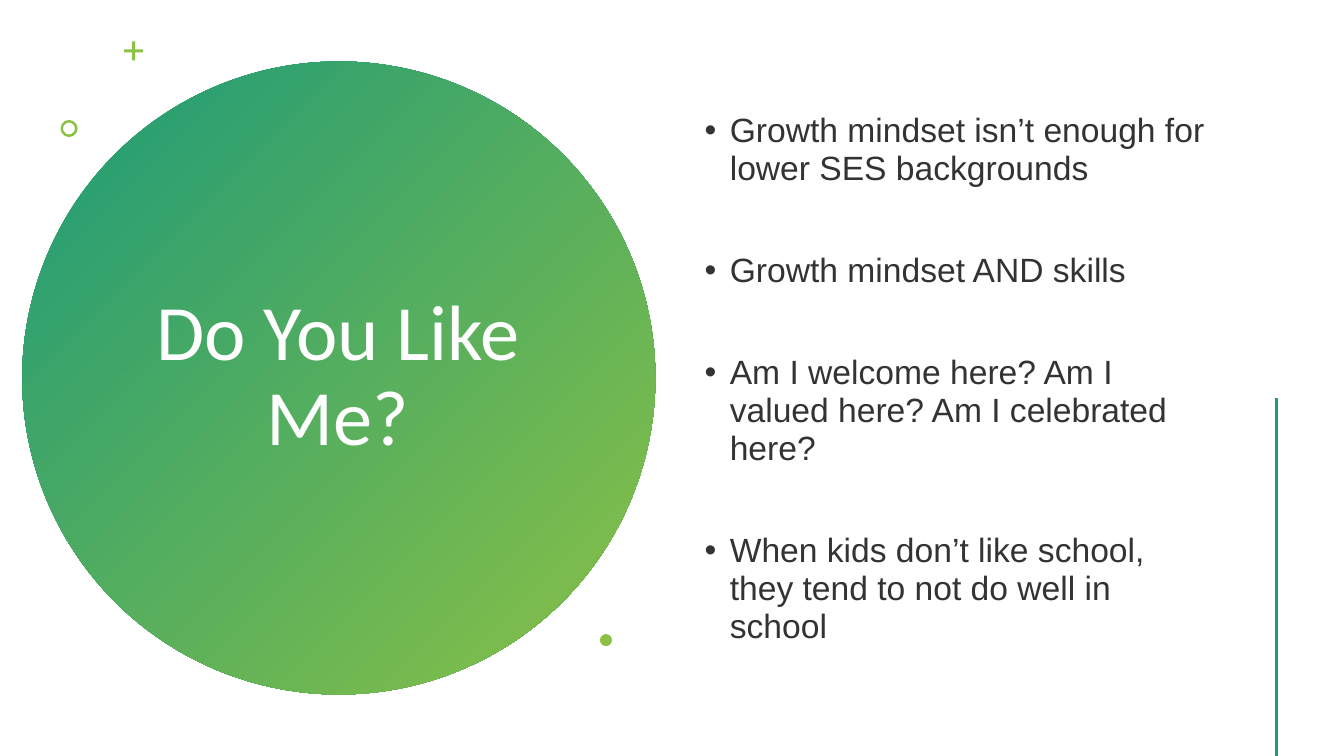
import pptx
import pptx.util
import pptx.dml.color
import pptx.enum.shapes
import pptx.enum.text
import pptx.oxml
import pptx.oxml.ns

SHAPE = pptx.enum.shapes.MSO_SHAPE
ALIGN = pptx.enum.text.PP_ALIGN
Inches, Pt = pptx.util.Inches, pptx.util.Pt

WIDTH, HEIGHT = 13.33, 7.5
COLORS = {"teal": "1D9A78", "green": "8BC145", "white": "FFFFFF", "text": "333333"}
TITLE = "Do You Like Me?"
POINTS = [
    "Growth mindset isn’t enough for lower SES backgrounds",
    "Growth mindset AND skills",
    "Am I welcome here? Am I valued here? Am I celebrated here?",
    "When kids don’t like school, they tend to not do well in school",
]
CIRCLE = (0.22, 0.61, 6.28, 6.28)
TITLE_BOX = (1.36, 1.41, 3.99, 4.67)
BODY_BOX = (6.89, 0.57, 5.22, 6.38)
ACCENTS = [
    (SHAPE.CROSS, (1.23, 0.41, 0.19, 0.19), 0.42),
    (SHAPE.DONUT, (0.6, 1.19, 0.17, 0.17), 0.15),
    (SHAPE.OVAL, (5.95, 6.29, 0.12, 0.12), None),
]
RULE_X, RULE_TOP = 0.95 * WIDTH, 3.95
INDENT = 0.25
TITLE_FORMAT = {"size": Pt(56), "name": "Calibri", "bold": False}
BODY_FORMAT = {"size": Pt(24), "name": "Arial"}
TITLE_SPACING = {"alignment": ALIGN.CENTER, "line_spacing": 0.9}
BODY_SPACING = {"alignment": ALIGN.LEFT, "line_spacing": 0.94}
FRAME = {
    "word_wrap": True,
    "auto_size": pptx.enum.text.MSO_AUTO_SIZE.NONE,
    "vertical_anchor": pptx.enum.text.MSO_ANCHOR.MIDDLE,
}


def rgb(name):
    return pptx.dml.color.RGBColor.from_string(COLORS[name])


def box(lengths):
    return [Inches(v) for v in lengths]


def assign(target, values):
    for key, value in values.items():
        setattr(target, key, value)


def add_text(p, text, spacing, font, color):
    assign(p, spacing)
    r = p.add_run()
    r.text = text
    assign(r.font, font)
    r.font.color.rgb = rgb(color)


def add_plain(s, kind, lengths):
    sp = s.shapes.add_shape(kind, *box(lengths))
    sp.shadow.inherit = False
    sp.line.fill.background()
    return sp


def add_bullet(p):
    pPr = p._p.get_or_add_pPr()
    pPr.set("marL", str(Inches(INDENT)))
    pPr.set("indent", str(-Inches(INDENT)))
    ns = pptx.oxml.ns.nsdecls("a")
    for tag in ('buFont %s typeface="Arial"', 'buChar %s char="•"'):
        pPr.append(pptx.oxml.parse_xml("<a:" + tag % ns + "/>"))


def main():
    prs = pptx.Presentation()
    prs.slide_width, prs.slide_height = Inches(WIDTH), Inches(HEIGHT)
    s = prs.slides.add_slide(prs.slide_layouts[5])

    title = s.shapes.title
    assign(title, dict(zip(("left", "top", "width", "height"), box(TITLE_BOX))))
    assign(title.text_frame, FRAME)
    add_text(title.text_frame.paragraphs[0], TITLE, TITLE_SPACING, TITLE_FORMAT, "white")

    circle = add_plain(s, SHAPE.OVAL, CIRCLE)
    circle.fill.gradient()
    circle.fill.gradient_angle = 315
    for stop, name in zip(circle.fill.gradient_stops, ("teal", "green")):
        stop.color.rgb = rgb(name)
    title.element.addprevious(circle.element)

    for kind, lengths, adjustment in ACCENTS:
        sp = add_plain(s, kind, lengths)
        sp.fill.solid()
        sp.fill.fore_color.rgb = rgb("green")
        if adjustment is not None:
            sp.adjustments[0] = adjustment

    tf = s.shapes.add_textbox(*box(BODY_BOX)).text_frame
    assign(tf, FRAME)
    for i, text in enumerate(POINTS):
        p = tf.add_paragraph() if i else tf.paragraphs[0]
        add_text(p, text, BODY_SPACING, BODY_FORMAT, "text")
        p.space_before = Pt(46 if i else 0)
        add_bullet(p)

    rule = s.shapes.add_connector(
        pptx.enum.shapes.MSO_CONNECTOR.STRAIGHT,
        *box((RULE_X, RULE_TOP, RULE_X, HEIGHT)),
    )
    rule.line.color.rgb = rgb("teal")
    rule.line.width = Pt(2)
    rule.element.spPr.append(pptx.oxml.parse_xml("<a:effectLst %s/>" % pptx.oxml.ns.nsdecls("a")))

    prs.save("out.pptx")


if __name__ == "__main__":
    main()
